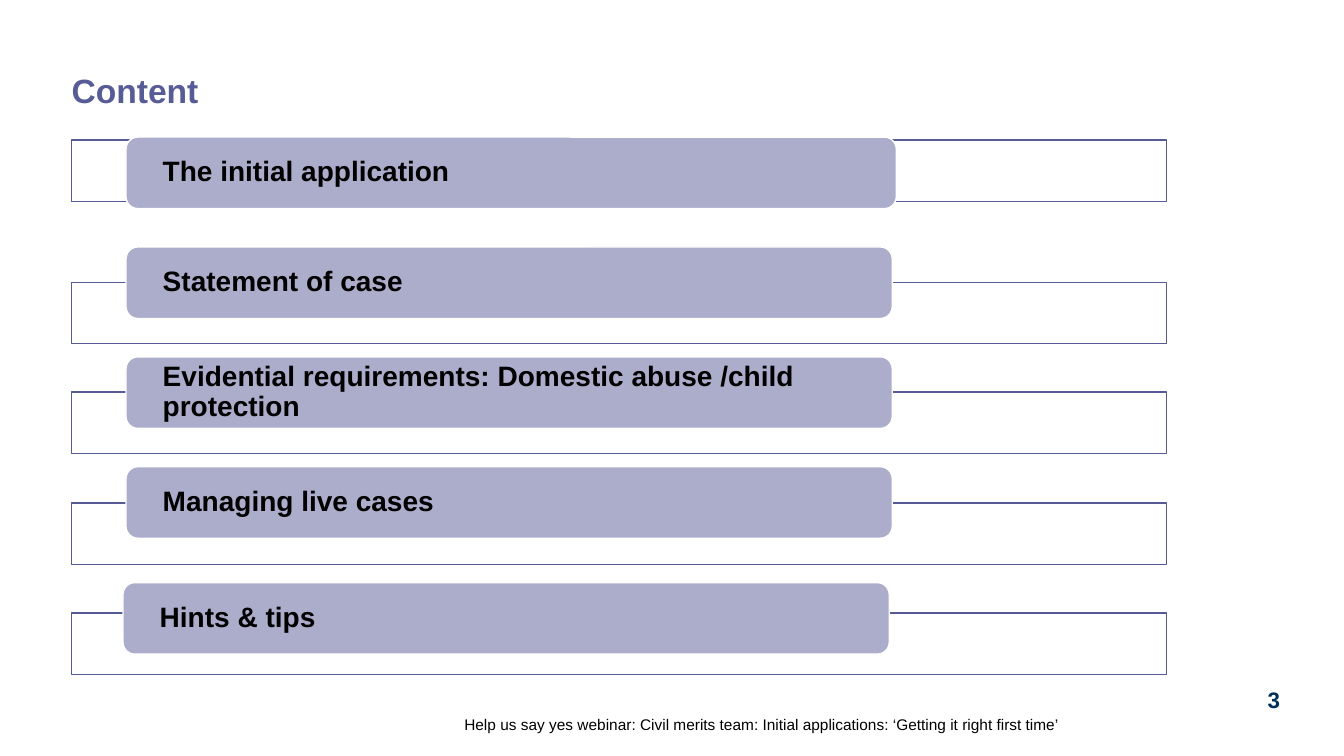
from dataclasses import dataclass

from lxml import etree
from pptx import Presentation
from pptx.dml.color import RGBColor
from pptx.enum.shapes import MSO_SHAPE
from pptx.enum.text import MSO_ANCHOR, PP_ALIGN
from pptx.oxml.ns import qn
from pptx.util import Pt

RECT, ROUNDED = MSO_SHAPE.RECTANGLE, MSO_SHAPE.ROUNDED_RECTANGLE
TOP, MIDDLE, BOTTOM = MSO_ANCHOR.TOP, MSO_ANCHOR.MIDDLE, MSO_ANCHOR.BOTTOM
LEFT, CENTER, RIGHT = PP_ALIGN.LEFT, PP_ALIGN.CENTER, PP_ALIGN.RIGHT

EMU_PER_PX = 9144  # 100 px to the inch
COLOURS = {
    "title": "575C96",
    "frame": "565B96",
    "bar": "ABADCB",
    "white": "FFFFFF",
    "black": "000000",
    "number": "003057",
}
FRAME_LEFT, FRAME_WIDTH, FRAME_HEIGHT = 71, 1086, 61
BAR_HEIGHT, BAR_INSET = 71, 33


@dataclass
class Topic:
    text: str
    frame_top: int
    bar_left: int
    bar_top: int
    bar_width: int = 760


@dataclass
class Label:
    text: str
    area: tuple[int, int, int, int]
    size: int
    colour: str
    bold: bool = True
    align: PP_ALIGN = LEFT
    anchor: MSO_ANCHOR = TOP
    spacing: float = 1.0


TOPICS = [
    Topic("The initial application", 139, 125, 136, 764),
    Topic("Statement of case", 280, 125, 245),
    Topic("Evidential requirements: Domestic abuse /child protection", 389, 125, 354),
    Topic("Managing live cases", 499, 125, 463),
    Topic("Hints & tips", 608, 122, 578),
]
TITLE = Label("Content", (71, 74, 1204, 38), 24, "title", spacing=0.9)
FOOTER = Label(
    "Help us say yes webinar: Civil merits team: Initial applications: "
    "‘Getting it right first time’",
    (57, 692, 994, 36), 11, "black", bold=False, align=RIGHT, anchor=BOTTOM,
)
PAGE_NUMBER = Label("3", (1244, 681, 39, 28), 16, "number", align=CENTER)


def px(length: int) -> int:
    return length * EMU_PER_PX


def rgb(name: str) -> RGBColor:
    return RGBColor.from_string(COLOURS[name])


def set_all(target, values: dict) -> None:
    for name, value in values.items():
        setattr(target, name, value)


def write(shape, label: Label, inset: int = 0) -> None:
    frame = shape.text_frame
    set_all(frame, {
        "word_wrap": True, "vertical_anchor": label.anchor,
        "margin_left": px(inset), "margin_right": px(inset),
        "margin_top": 0, "margin_bottom": 0,
    })
    para = frame.paragraphs[0]
    set_all(para, {"alignment": label.align, "line_spacing": label.spacing})
    span = para.add_run()
    span.text = label.text
    set_all(span.font, {"name": "Arial", "size": Pt(label.size), "bold": label.bold})
    span.font.color.rgb = rgb(label.colour)


def add_label(page, label: Label) -> None:
    write(page.shapes.add_textbox(*map(px, label.area)), label)


def add_box(page, kind: MSO_SHAPE, area: tuple[int, int, int, int], fill: str, line: str):
    box = page.shapes.add_shape(kind, *map(px, area))
    box.shadow.inherit = False
    box.fill.solid()
    box.fill.fore_color.rgb = rgb(fill)
    box.line.color.rgb = rgb(line)
    box.line.width = Pt(1)
    return box


def add_topic(page, topic: Topic) -> None:
    # Outlined frame, 90% opaque
    area = (FRAME_LEFT, topic.frame_top, FRAME_WIDTH, FRAME_HEIGHT)
    frame = add_box(page, RECT, area, "white", "frame")
    colour = frame.fill._xPr.find(qn("a:solidFill")).find(qn("a:srgbClr"))
    etree.SubElement(colour, qn("a:alpha"), val="90000")

    # Rounded bar with the topic's name
    area = (topic.bar_left, topic.bar_top, topic.bar_width, BAR_HEIGHT)
    bar = add_box(page, ROUNDED, area, "bar", "white")
    write(bar, Label(topic.text, area, 20, "black", anchor=MIDDLE, spacing=0.9), BAR_INSET)


def main() -> None:
    deck = Presentation()
    set_all(deck, {"slide_width": px(1333), "slide_height": px(750)})
    page = deck.slides.add_slide(deck.slide_layouts[6])

    add_label(page, TITLE)
    for topic in TOPICS:
        add_topic(page, topic)

    # Footer and page number
    add_label(page, FOOTER)
    add_label(page, PAGE_NUMBER)
    deck.save("out.pptx")


if __name__ == "__main__":
    main()
